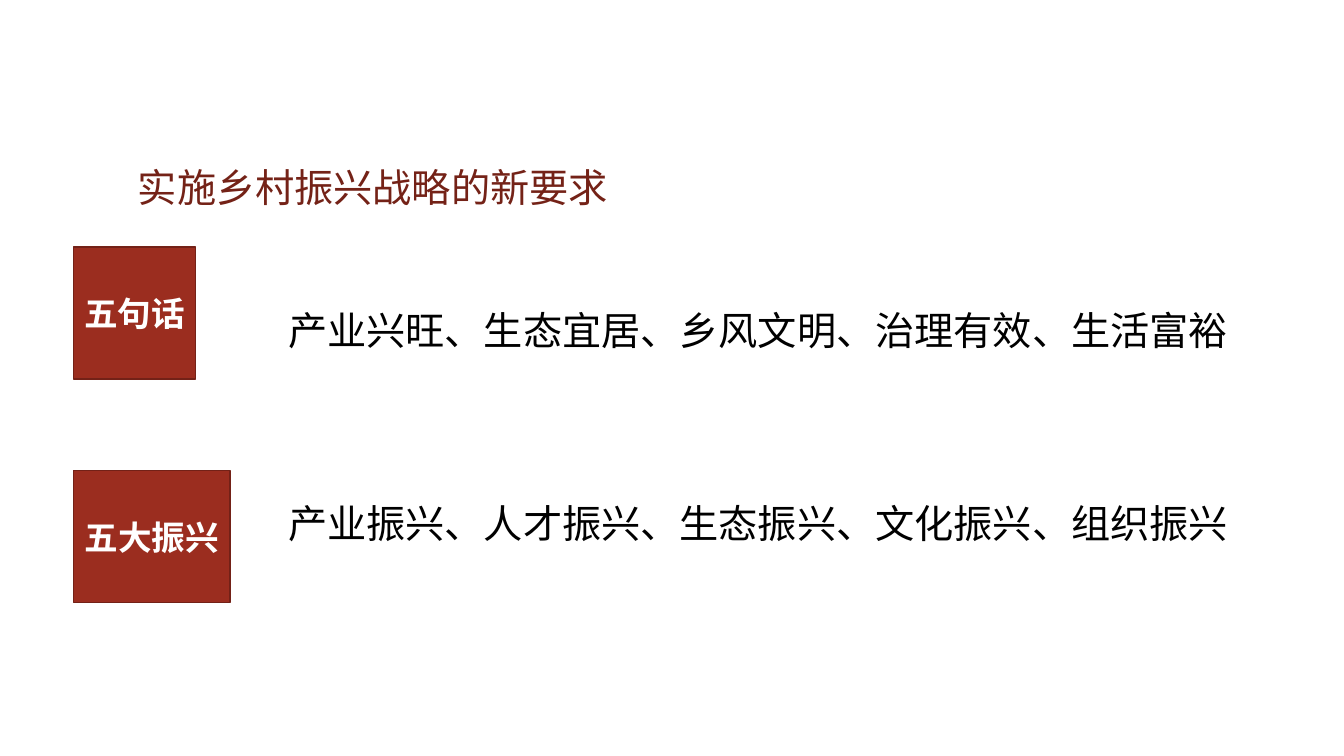
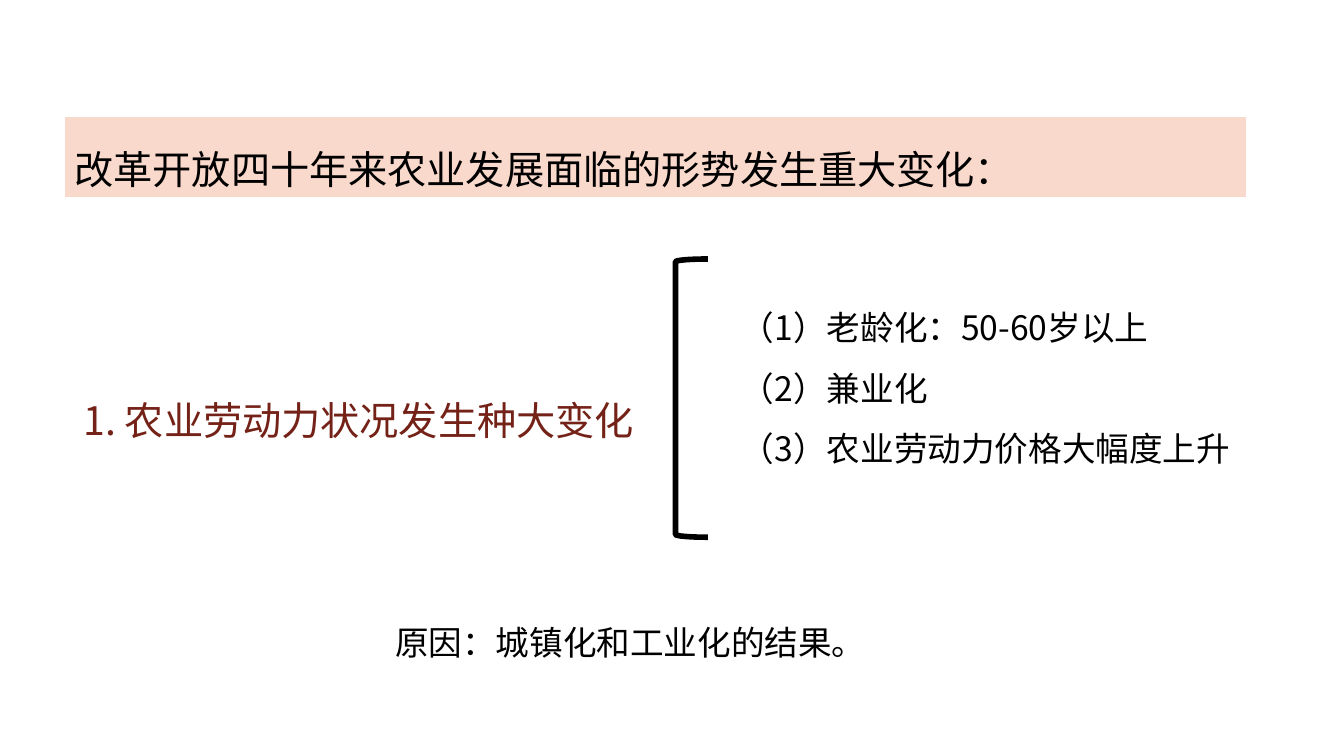
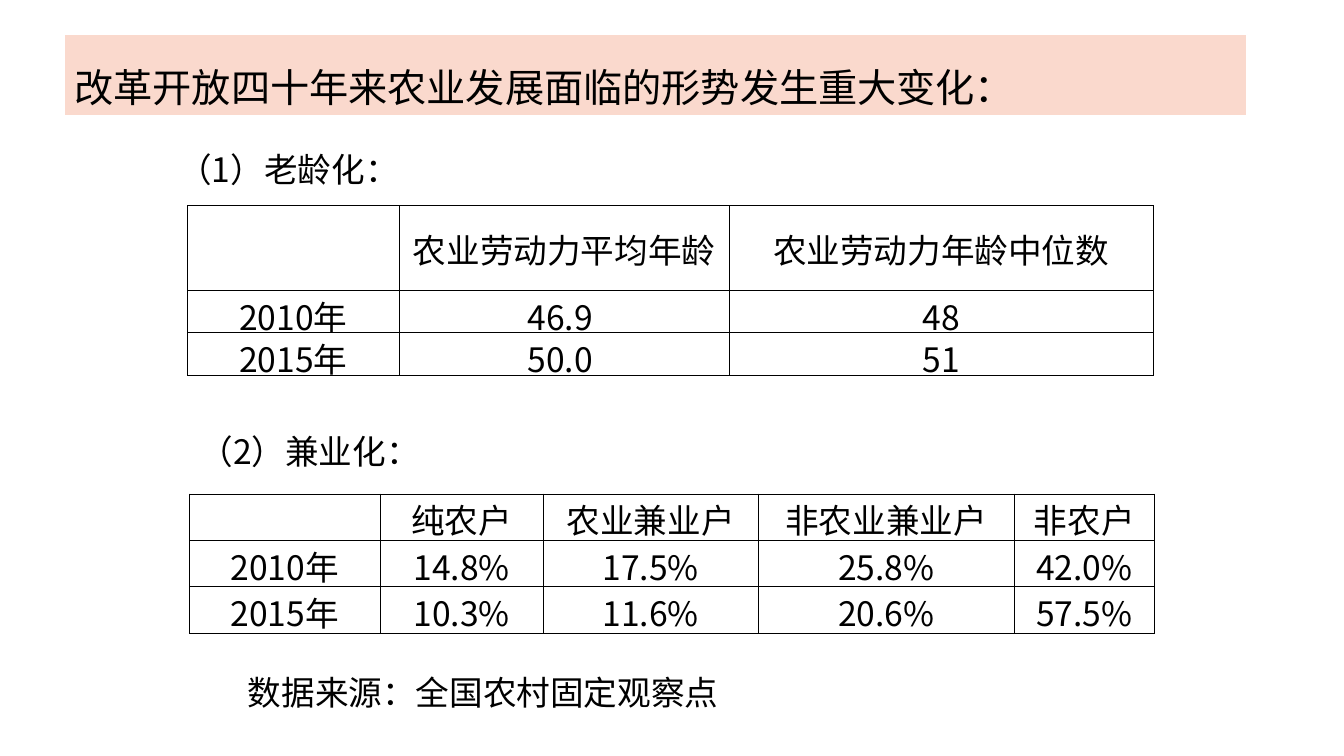
from lxml import etree
from pptx import Presentation
from pptx.dml.color import RGBColor
from pptx.enum.shapes import MSO_SHAPE
from pptx.enum.text import MSO_ANCHOR, MSO_AUTO_SIZE, PP_ALIGN
from pptx.oxml.ns import qn
from pptx.util import Inches, Pt

# Shared style
FONT = "Noto Sans CJK SC"
BLACK = RGBColor(0x00, 0x00, 0x00)
WHITE = RGBColor(0xFF, 0xFF, 0xFF)
RED = RGBColor(0x9B, 0x2D, 0x1F)
DARK_RED = RGBColor(0x73, 0x21, 0x17)
HEADING_RED = RGBColor(0x74, 0x22, 0x17)
PEACH = RGBColor(0xFA, 0xD9, 0xCD)

HEADING = {"size": Pt(28), "color": HEADING_RED}
LARGE = {"size": Pt(28), "color": BLACK}
BODY = {"size": Pt(24), "color": BLACK}
LABEL = {"size": Pt(24), "color": WHITE, "bold": True}
SPACED = {"alignment": PP_ALIGN.JUSTIFY, "line_spacing": 1.5}
CENTRED = {"alignment": PP_ALIGN.CENTER}

# Content
REQUIREMENTS_TITLE = "实施乡村振兴战略的新要求"
# label, label top, label width, sentence, sentence top
REQUIREMENTS = [
    ("五句话", 2.45, 1.21, "产业兴旺、生态宜居、乡风文明、治理有效、生活富裕", 2.76),
    ("五大振兴", 4.67, 1.55, "产业振兴、人才振兴、生态振兴、文化振兴、组织振兴", 4.67),
]
CHANGES_TITLE = "改革开放四十年来农业发展面临的形势发生重大变化："
LABOUR_HEADING = "1. 农业劳动力状况发生种大变化"
LABOUR_CHANGES = ["（1）老龄化：50-60岁以上", "（2）兼业化", "（3）农业劳动力价格大幅度上升"]
REASON = "原因：城镇化和工业化的结果。"
AGEING = "（1）老龄化："
# The first column is a narrow open margin
AGE_ROWS = [
    ["", "", "农业劳动力平均年龄", "农业劳动力年龄中位数"],
    ["", "2010年", "46.9 ", "48"],
    ["", "2015年", "50.0 ", "51"],
]
SIDE_WORK = "（2）兼业化："
HOUSEHOLD_ROWS = [
    ["", "纯农户", "农业兼业户", "非农业兼业户", "非农户"],
    ["2010年", "14.8%", "17.5%", "25.8%", "42.0%"],
    ["2015年", "10.3%", "11.6%", "20.6%", "57.5%"],
]
DATA_SOURCE = "数据来源：全国农村固定观察点"


def write(frame, lines, style, layout, indent=0):
    """Fill a text frame with one paragraph per line."""
    for index, line in enumerate(lines):
        para = frame.paragraphs[0] if index == 0 else frame.add_paragraph()
        for name, value in layout.items():
            setattr(para, name, value)
        if indent:
            para._p.get_or_add_pPr().set("indent", str(Inches(indent)))
        span = para.add_run()
        span.text = line
        span.font.name = FONT
        for name, value in style.items():
            if name == "color":
                span.font.color.rgb = value
            else:
                setattr(span.font, name, value)
        properties = span._r.get_or_add_rPr()
        properties.set("lang", "zh-CN")
        etree.SubElement(properties, qn("a:ea"), typeface=FONT)


def add_text(page, place, lines, style, layout, indent=0, wrap=True):
    box = page.shapes.add_textbox(*map(Inches, place))
    frame = box.text_frame
    frame.word_wrap = wrap
    frame.auto_size = MSO_AUTO_SIZE.SHAPE_TO_FIT_TEXT
    write(frame, lines, style, layout, indent)


def add_panel(page, place, text, style, layout, fill, line):
    panel = page.shapes.add_shape(MSO_SHAPE.RECTANGLE, *map(Inches, place))
    panel.shadow.inherit = False
    panel.fill.solid()
    panel.fill.fore_color.rgb = fill
    panel.line.color.rgb = line
    panel.line.width = Pt(1)
    frame = panel.text_frame
    frame.word_wrap = True
    frame.vertical_anchor = MSO_ANCHOR.MIDDLE
    write(frame, [text], style, layout)
    return panel


def add_band(page, top):
    add_panel(page, (0.64, top, 11.73, 0.81), CHANGES_TITLE, LARGE, SPACED, PEACH, WHITE)


def outline_cell(cell, drawn_sides):
    properties = cell._tc.get_or_add_tcPr()
    for position, side in enumerate(("lnL", "lnR", "lnT", "lnB")):
        edge = etree.Element(qn(f"a:{side}"), w=str(Pt(0.5)))
        if side in drawn_sides:
            fill = etree.SubElement(edge, qn("a:solidFill"))
            etree.SubElement(fill, qn("a:srgbClr"), val=str(BLACK))
        else:
            etree.SubElement(edge, qn("a:noFill"))
        properties.insert(position, edge)


def add_grid(page, left, top, widths, heights, rows, open_columns=0):
    place = (left, top, sum(widths), sum(heights))
    table = page.shapes.add_table(len(rows), len(widths), *map(Inches, place)).table
    table.first_row = table.horz_banding = False
    for column, width in zip(table.columns, widths):
        column.width = Inches(width)
    for row, height, values in zip(table.rows, heights, rows):
        row.height = Inches(height)
        for index, (cell, value) in enumerate(zip(row.cells, values)):
            cell.fill.background()
            cell.vertical_anchor = MSO_ANCHOR.MIDDLE
            cell.margin_left = cell.margin_right = cell.margin_top = Inches(0.01)
            cell.margin_bottom = 0
            outline_cell(cell, ("lnR",) if index < open_columns else ("lnL", "lnR", "lnT", "lnB"))
            if value:
                write(cell.text_frame, [value], BODY, CENTRED)


def build_requirements(page):
    add_text(page, (0.73, 1.34, 9.7, 0.81), [REQUIREMENTS_TITLE], HEADING, SPACED, indent=0.54)
    for label, label_top, width, sentence, sentence_top in REQUIREMENTS:
        panel = add_panel(page, (0.73, label_top, width, 1.31), label, LABEL, CENTRED, RED, DARK_RED)
        panel.text_frame.margin_left = panel.text_frame.margin_right = Inches(0.05)
        add_text(page, (2.76, sentence_top, 9.93, 0.81), [sentence], LARGE, SPACED)


def build_labour_changes(page):
    add_band(page, 1.15)
    add_text(page, (7.25, 2.8, 5.12, 2.52), LABOUR_CHANGES, BODY, SPACED)
    add_text(page, (0.64, 3.65, 5.9, 0.72), [LABOUR_HEADING], HEADING, SPACED, indent=0.09, wrap=False)
    bracket = page.shapes.add_shape(MSO_SHAPE.LEFT_BRACKET, *map(Inches, (6.7, 2.57, 0.32, 2.76)))
    bracket.shadow.inherit = False
    bracket.fill.background()
    bracket.line.color.rgb = BLACK
    bracket.line.width = Pt(4)
    add_text(page, (3.82, 5.92, 4.91, 0.64), [REASON], BODY, SPACED, wrap=False)


def build_statistics(page):
    add_band(page, 0.34)
    # Ageing
    add_grid(page, 1.67, 2.04, [0.19, 2.1, 3.27, 4.21], [0.84, 0.42, 0.42], AGE_ROWS, open_columns=1)
    add_text(page, (1.67, 1.43, 2.52, 0.5), [AGEING], BODY, {})
    # Side work
    add_grid(page, 1.88, 4.9, [1.89, 1.62, 2.13, 2.54, 1.39], [0.46] * 3, HOUSEHOLD_ROWS)
    add_text(page, (1.88, 4.03, 2.42, 0.71), [SIDE_WORK], BODY, SPACED, wrap=False)
    add_text(page, (2.36, 6.62, 7.34, 0.5), [DATA_SOURCE], BODY, {})


def main():
    deck = Presentation()
    deck.slide_width, deck.slide_height = Inches(13.33), Inches(7.5)
    for build in (build_requirements, build_labour_changes, build_statistics):
        build(deck.slides.add_slide(deck.slide_layouts[6]))
    deck.save("out.pptx")


if __name__ == "__main__":
    main()
